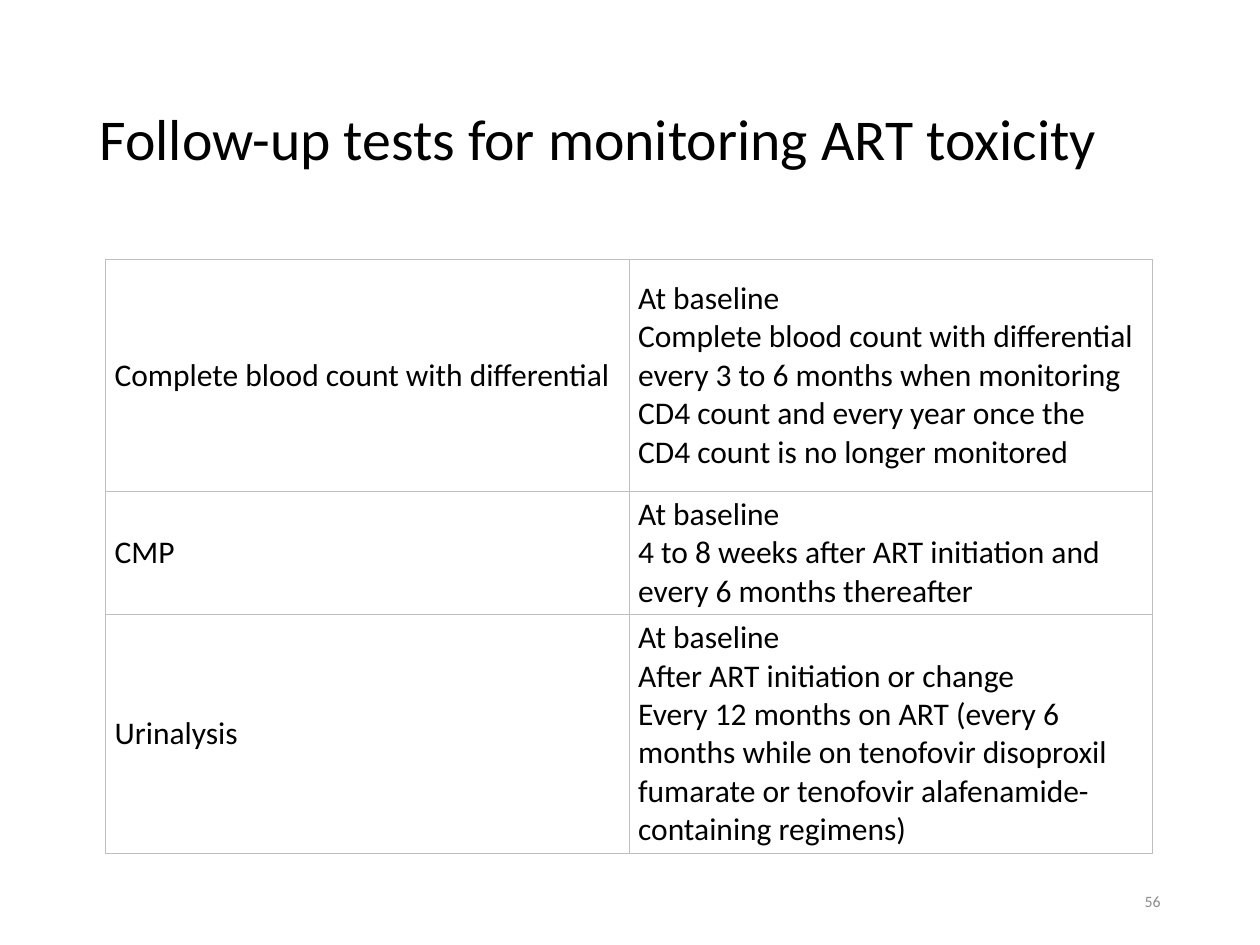
import dataclasses

import lxml.etree
import pptx
import pptx.dml.color
import pptx.enum.text
import pptx.oxml.ns
import pptx.util

Inches = pptx.util.Inches
Align = pptx.enum.text.PP_ALIGN
Anchor = pptx.enum.text.MSO_ANCHOR


@dataclasses.dataclass(frozen=True)
class Theme:
    font: str = "Calibri"
    text: str = "000000"
    muted: str = "8C8C8C"
    border: str = "BFBFBF"
    background: str = "FFFFFF"
    title_size: float = 33
    table_size: float = 18
    number_size: float = 9
    border_width: float = 0.75


THEME = Theme()

TESTS = [
    ("Complete blood count with differential",
     ["At baseline",
      "Complete blood count with differential every 3 to 6 months when monitoring "
      "CD4 count and every year once the CD4 count is no longer monitored"]),
    ("CMP",
     ["At baseline",
      "4 to 8 weeks after ART initiation and every 6 months thereafter"]),
    ("Urinalysis",
     ["At baseline",
      "After ART initiation or change",
      "Every 12 months on ART (every 6 months while on tenofovir disoproxil "
      "fumarate or tenofovir alafenamide-containing regimens)"]),
]
ROW_HEIGHTS = [1.84, 0.95, 1.9]


def write_text(frame, lines, size, color=THEME.text, align=Align.LEFT, spacing=None):
    frame.word_wrap = True
    for index, line in enumerate(lines):
        paragraph = frame.add_paragraph() if index else frame.paragraphs[0]
        paragraph.alignment = align
        if spacing:
            paragraph.line_spacing = spacing
        run = paragraph.add_run()
        run.text = line
        run.font.name = THEME.font
        run.font.size = pptx.util.Pt(size)
        run.font.color.rgb = pptx.dml.color.RGBColor.from_string(color)


def set_borders(cell):
    properties = cell._tc.get_or_add_tcPr()
    for position, side in enumerate(("a:lnL", "a:lnR", "a:lnT", "a:lnB")):
        line = lxml.etree.Element(pptx.oxml.ns.qn(side),
                                  w=str(pptx.util.Pt(THEME.border_width)))
        fill = lxml.etree.SubElement(line, pptx.oxml.ns.qn("a:solidFill"))
        lxml.etree.SubElement(fill, pptx.oxml.ns.qn("a:srgbClr"), val=THEME.border)
        properties.insert(position, line)


def fill_cell(cell, lines):
    cell.fill.solid()
    cell.fill.fore_color.rgb = pptx.dml.color.RGBColor.from_string(THEME.background)
    cell.vertical_anchor = Anchor.MIDDLE
    cell.margin_left = cell.margin_right = Inches(0.07)
    cell.margin_top = cell.margin_bottom = Inches(0.03)
    write_text(cell.text_frame, lines, THEME.table_size)
    set_borders(cell)


def place_title(slide, text, left, top, width, height):
    title = slide.shapes.title
    title.left, title.top, title.width, title.height = left, top, width, height
    title.text_frame.vertical_anchor = Anchor.MIDDLE
    write_text(title.text_frame, [text], THEME.title_size, spacing=0.9)


def place_tests_table(slide, left, top, width, height):
    table = slide.shapes.add_table(len(TESTS), 2, left, top, width, height).table
    table.first_row = False
    table.horz_banding = False
    for column in table.columns:
        column.width = width // 2
    for row, row_height, (test, schedule) in zip(table.rows, ROW_HEIGHTS, TESTS):
        row.height = Inches(row_height)
        fill_cell(row.cells[0], [test])
        fill_cell(row.cells[1], schedule)


def place_slide_number(slide, number, left, top, width, height):
    frame = slide.shapes.add_textbox(left, top, width, height).text_frame
    frame.vertical_anchor = Anchor.MIDDLE
    write_text(frame, [number], THEME.number_size, THEME.muted, Align.RIGHT)


def main():
    presentation = pptx.Presentation()
    presentation.slide_width = Inches(10)
    presentation.slide_height = Inches(7.5)
    slide = presentation.slides.add_slide(presentation.slide_layouts.get_by_name("Title Only"))
    place_title(slide, "Follow-up tests for monitoring ART toxicity",
                Inches(0.69), Inches(0.4), Inches(8.62), Inches(1.45))
    place_tests_table(slide, Inches(0.84), Inches(2.06),
                      Inches(8.31), Inches(sum(ROW_HEIGHTS)))
    place_slide_number(slide, "56", Inches(7.06), Inches(6.95), Inches(2.25), Inches(0.4))
    presentation.save("out.pptx")


if __name__ == "__main__":
    main()
